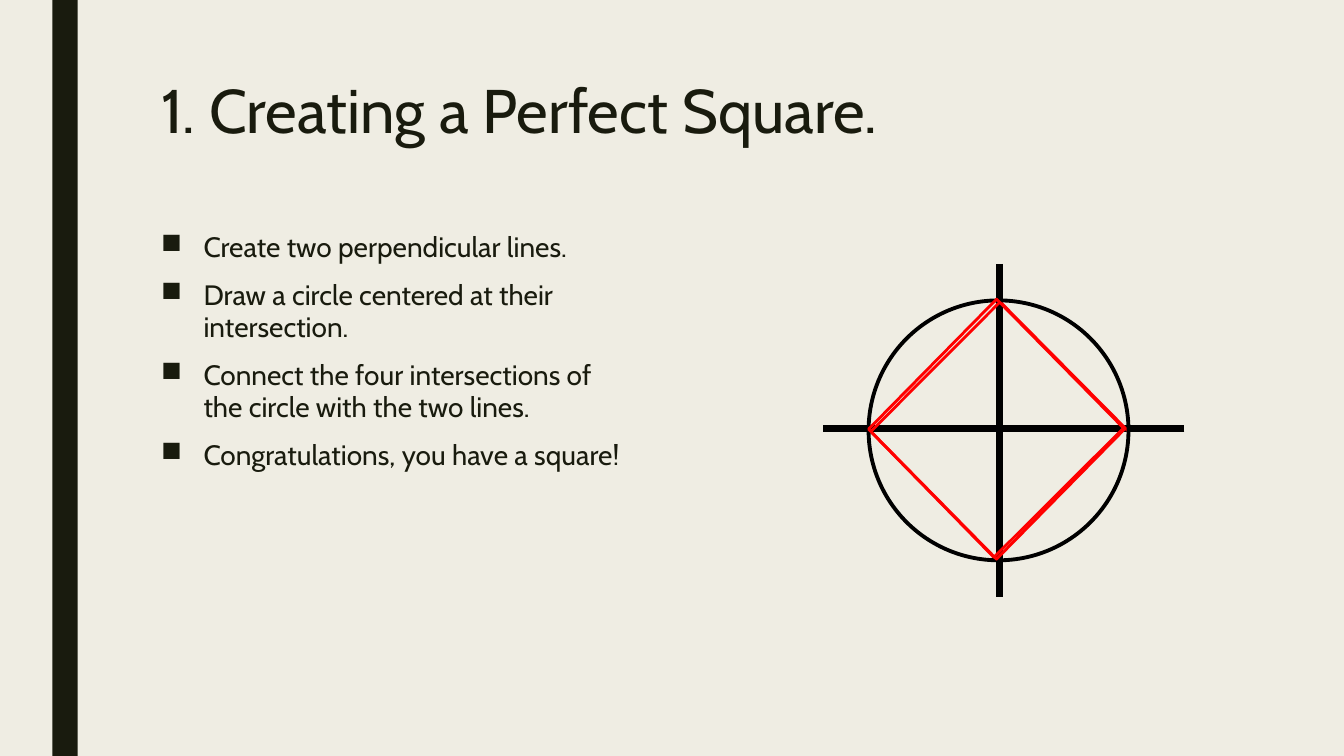
from lxml import etree
from pptx import Presentation
from pptx import util as u
from pptx.dml.color import RGBColor
from pptx.enum import shapes, text
from pptx.oxml.ns import qn

Cm, Pt = u.Cm, u.Pt
kinds = shapes.MSO_SHAPE
hues = {"paper": "EFEDE3", "ink": "191B0E", "black": "000000", "red": "FF0000"}
tint = {name: RGBColor.from_string(code) for name, code in hues.items()}

deck = Presentation()
deck.slide_width, deck.slide_height = Cm(33.87), Cm(19.05)
slide = deck.slides.add_slide(deck.slide_layouts[6])
slide.background.fill.solid()
slide.background.fill.fore_color.rgb = tint["paper"]

band = slide.shapes.add_shape(kinds.RECTANGLE, Cm(1.32), 0, Cm(0.64), Cm(19.05))
band.shadow.inherit = False
band.fill.solid()
band.fill.fore_color.rgb = tint["ink"]
band.line.fill.background()


def write(box, lines, size, space):
    label = slide.shapes.add_textbox(*[Cm(n) for n in box])
    frame = label.text_frame
    frame.word_wrap = True
    frame.vertical_anchor = text.MSO_ANCHOR.TOP
    frame.text = "\n".join(lines)
    for para in frame.paragraphs:
        para.line_spacing = space
        font = para.runs[0].font
        font.name, font.size = "Cabin", Pt(size)
        font.color.rgb = tint["ink"]
    return frame


write((3.81, 1.91, 26.67, 4.11), ["1. Creating a Perfect Square."], 44, 0.89)
steps = [
    "Create two perpendicular lines.",
    "Draw a circle centered at their intersection.",
    "Connect the four intersections of the circle with the two lines.",
    "Congratulations, you have a square!",
]
body = write((3.81, 5.72, 12.27, 9.96), steps, 20, 0.94)
for para in body.paragraphs:
    para.space_before, para.space_after = Pt(10), Pt(2)
    props = para._p.get_or_add_pPr()
    props.set("marL", str(Cm(1.07)))
    props.set("indent", str(-Cm(1.07)))
    etree.SubElement(props, qn("a:buChar")).set("char", "■")

axes = [(25.2, 6.65, 25.2, 15.04), (29.85, 10.8, 20.75, 10.8)]
sides = [
    (21.95, 10.87, 25.22, 7.59),
    (25.17, 7.57, 28.42, 10.85),
    (28.3, 10.8, 25.02, 14.07),
    (25.12, 14.12, 21.89, 10.82),
]
for group, hue, width in [(axes, "black", 5), (sides, "red", 2)]:
    for ends in group:
        line = slide.shapes.add_connector(
            shapes.MSO_CONNECTOR.STRAIGHT, *[Cm(n) for n in ends])
        line.line.color.rgb = tint[hue]
        line.line.width = Pt(width)
        etree.SubElement(line._element.spPr, qn("a:effectLst"))

for kind, box, hue, width in [
    (kinds.OVAL, (21.89, 7.57, 6.55, 6.55), "black", 2.75),
    (kinds.DIAMOND, (21.89, 7.54, 6.45, 6.55), "red", 2),
]:
    shape = slide.shapes.add_shape(kind, *[Cm(n) for n in box])
    shape.shadow.inherit = False
    shape.fill.background()
    shape.line.color.rgb = tint[hue]
    shape.line.width = Pt(width)

deck.save("out.pptx")
